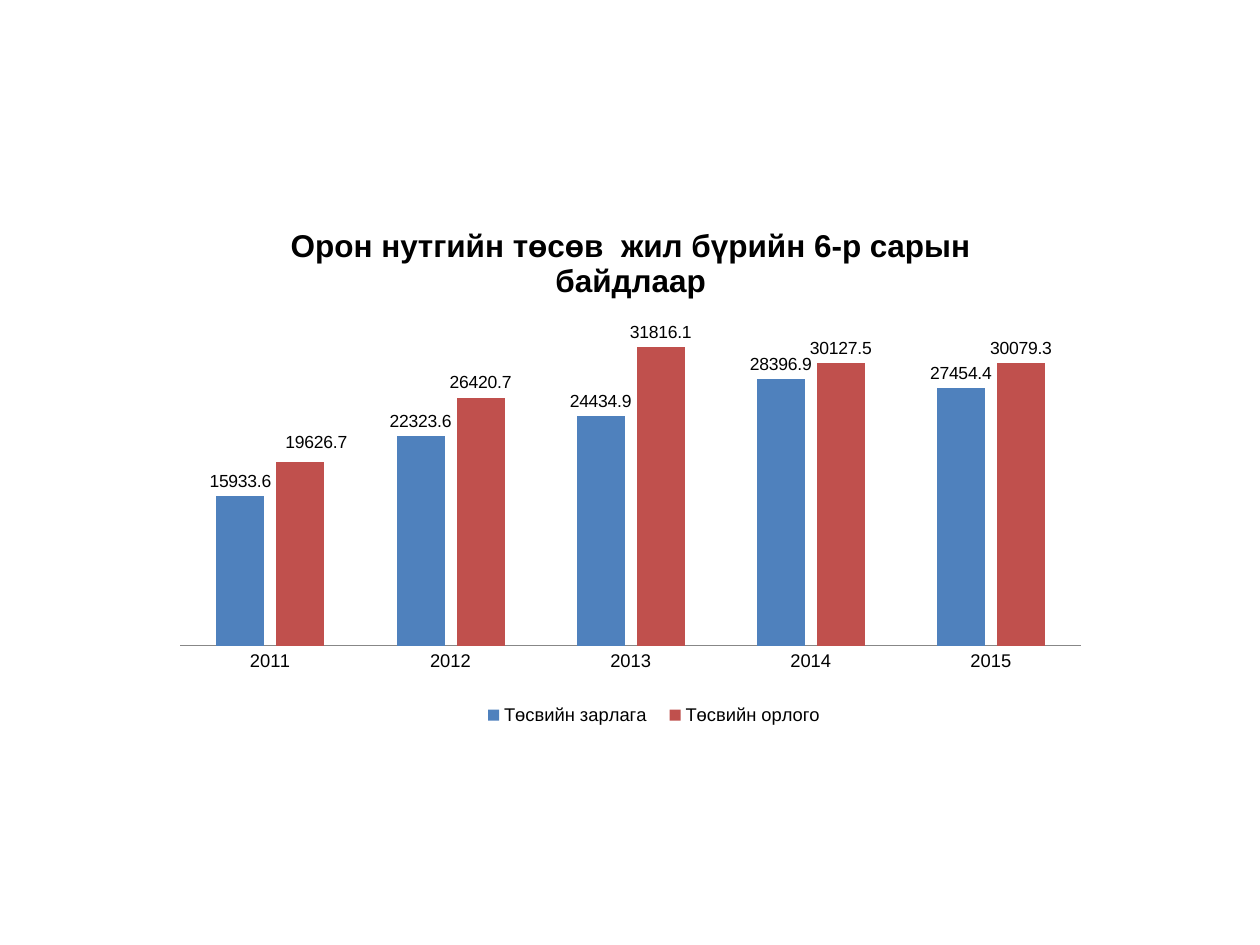
from lxml import etree
from pptx import Presentation
from pptx.chart.data import CategoryChartData
from pptx.dml.color import RGBColor
from pptx.enum.chart import XL_CHART_TYPE as ChartType
from pptx.enum.chart import XL_LABEL_POSITION as LabelPos
from pptx.enum.chart import XL_LEGEND_POSITION as LegendPos
from pptx.enum.chart import XL_TICK_MARK as Tick
from pptx.oxml.ns import qn
from pptx.util import Pt

TITLE = "Орон нутгийн төсөв  жил бүрийн 6-р сарын байдлаар"
YEARS = ["2011", "2012", "2013", "2014", "2015"]
BUDGET = [
    ("Төсвийн зарлага", "4F81BD", [15933.6, 22323.6, 24434.9, 28396.9, 27454.4]),
    ("Төсвийн орлого", "C0504D", [19626.7, 26420.7, 31816.1, 30127.5, 30079.3]),
]


def color(value):
    return RGBColor.from_string(value)


def set_font(font, size=10, bold=False, name="Arial", fill="000000"):
    font.name = name
    font.size = Pt(size)
    font.bold = bold
    font.color.rgb = color(fill)


def write(tf, text, **fmt):
    r = tf.paragraphs[0].add_run()
    r.text = text
    set_font(r.font, **fmt)


def set_layout(parent, index, **values):
    for old in parent.findall(qn("c:layout")):
        parent.remove(old)
    layout = etree.Element(qn("c:layout"))
    manual = etree.SubElement(layout, qn("c:manualLayout"))
    for tag, value in values.items():
        etree.SubElement(manual, qn(f"c:{tag}")).set("val", str(value))
    parent.insert(index, layout)


class Deck:
    text_size = 10
    axis_size = 10.5
    title_size = 18
    axis_line = "878787"

    def __init__(self, width, height):
        self.prs = Presentation()
        self.prs.slide_width, self.prs.slide_height = Pt(width), Pt(height)
        self.s = self.prs.slides.add_slide(self.prs.slide_layouts[6])

    def column_chart(self, x, y, w, h, title, cats, series, top):
        data = CategoryChartData()
        data.categories = cats
        for name, _, values in series:
            data.add_series(name, values)
        chart = self.s.shapes.add_chart(
            ChartType.COLUMN_CLUSTERED, Pt(x), Pt(y), Pt(w), Pt(h), data
        ).chart
        set_font(chart.font, size=self.text_size, name="Calibri")
        chart.has_title = True
        write(chart.chart_title.text_frame, title, size=self.title_size, bold=True)
        chart.chart_title.include_in_layout = False
        self.axes(chart, top)
        plot = chart.plots[0]
        plot.gap_width, plot.overlap = 150, -25
        plot.vary_by_categories = False
        for ser, (_, fill, _) in zip(plot.series, series):
            self.column_style(ser, fill)
        return chart

    def axes(self, chart, top):
        val = chart.value_axis
        val.minimum_scale, val.maximum_scale = 0, top
        val.has_major_gridlines = False
        val.visible = False
        cat = chart.category_axis
        cat.major_tick_mark = cat.minor_tick_mark = Tick.NONE
        cat.format.line.color.rgb = color(self.axis_line)
        cat.format.line.width = Pt(0.75)
        set_font(cat.tick_labels.font, size=self.axis_size)

    def column_style(self, ser, fill):
        ser.format.fill.solid()
        ser.format.fill.fore_color.rgb = color(fill)
        ser.invert_if_negative = False
        labels = ser.data_labels
        labels.show_value = True
        labels.position = LabelPos.OUTSIDE_END
        set_font(labels.font, size=self.text_size)

    def plot_area(self, chart, x, y, w, h):
        area = chart._chartSpace.find(".//" + qn("c:plotArea"))
        set_layout(area, 0, layoutTarget="inner", xMode="edge", yMode="edge",
                   x=x, y=y, w=w, h=h)

    def legend(self, chart, x, y, w, h):
        chart.has_legend = True
        legend = chart.legend
        legend.position = LegendPos.TOP
        legend.include_in_layout = False
        set_font(legend.font, size=self.axis_size)
        set_layout(legend._element, 1, xMode="edge", yMode="edge", x=x, y=y, w=w, h=h)

    def move_label(self, ser, point, dx, dy):
        label = ser.points[point].data_label
        set_font(label.font, size=self.text_size)
        label.position = LabelPos.OUTSIDE_END
        set_layout(label._dLbl, 1, x=dx, y=dy)

    def save(self):
        self.prs.save("out.pptx")


def main():
    deck = Deck(720, 540)
    chart = deck.column_chart(92.9, 115.2, 535, 308.9, TITLE, YEARS, BUDGET, 35000)
    deck.plot_area(chart, 0.019, 0.214, 0.962, 0.608)
    deck.legend(chart, 0.33, 0.92, 0.39, 0.06)
    deck.move_label(chart.plots[0].series[1], 0, 0.017, -0.008)
    deck.save()


if __name__ == "__main__":
    main()
